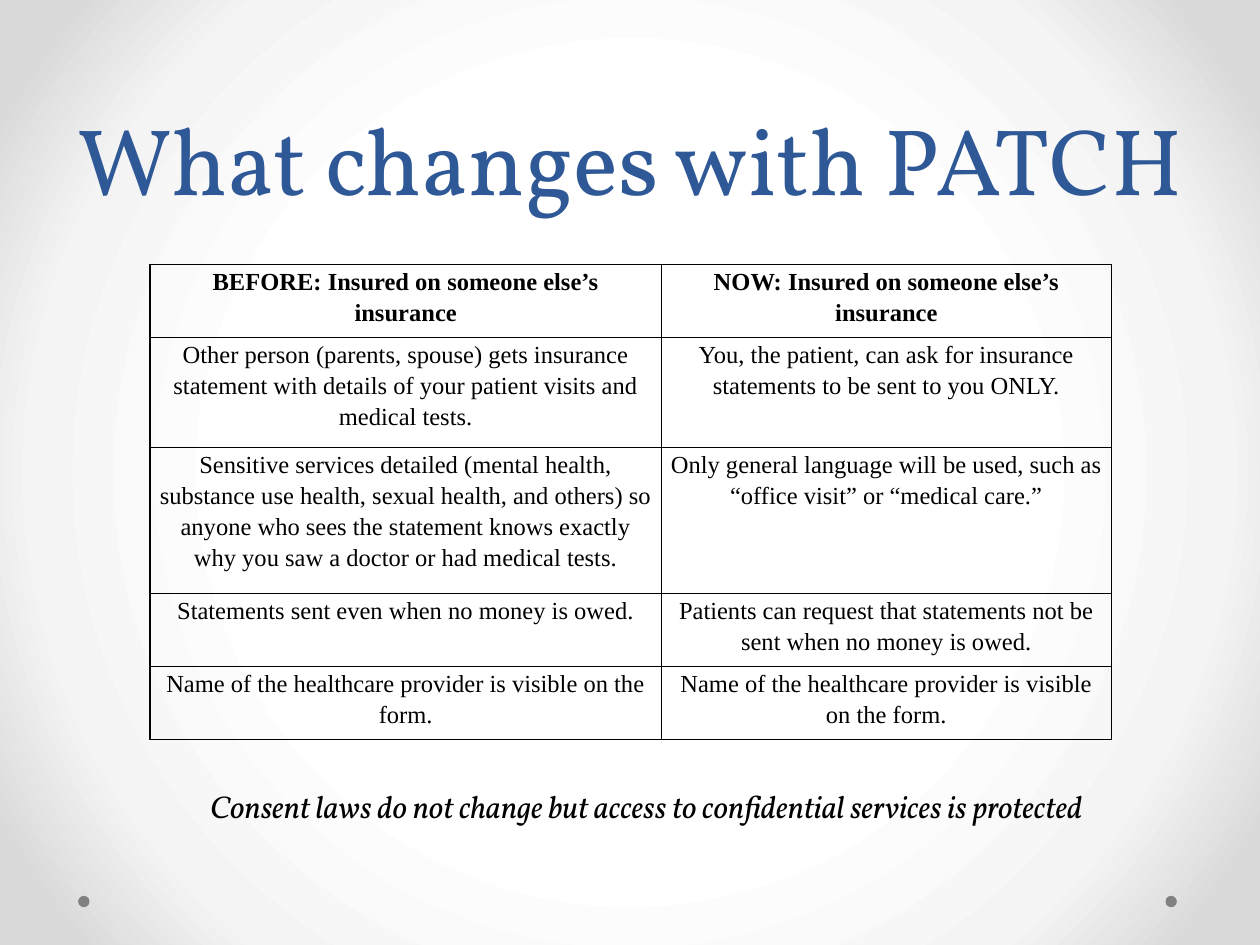
from pptx import Presentation, util as u
from pptx.dml.color import RGBColor
from pptx.enum import shapes, text
from pptx.oxml import parse_xml
from pptx.oxml.ns import nsdecls, qn

HEADING = "What changes with PATCH"
COMPARISON = [
    ("BEFORE: Insured on someone else’s insurance",
     "NOW: Insured on someone else’s insurance"),
    ("Other person (parents, spouse) gets insurance statement with details "
     "of your patient visits and medical tests.",
     "You, the patient, can ask for insurance statements to be sent to you ONLY."),
    ("Sensitive services detailed (mental health, substance use health, sexual "
     "health, and others) so anyone who sees the statement knows exactly why "
     "you saw a doctor or had medical tests.",
     "Only general language will be used, such as “office visit” or “medical care.”"),
    ("Statements sent even when no money is owed.",
     "Patients can request that statements not be sent when no money is owed."),
    ("Name of the healthcare provider is visible on the form.",) * 2,
]
CONSENT = "Consent laws do not change but access to confidential services is protected"


def color(code):
    return RGBColor.from_string(code)


def write(frame, words, size, font, ink="000000", bold=False, italic=False, spacing=None):
    paragraph = frame.paragraphs[0]
    paragraph.alignment = text.PP_ALIGN.CENTER
    paragraph.line_spacing = spacing
    run = paragraph.add_run()
    run.text = words
    run.font.size = u.Pt(size)
    run.font.name = font
    run.font.bold = bold
    run.font.italic = italic
    run.font.color.rgb = color(ink)


class Page:
    width, height = u.Inches(10), u.Inches(7.5)
    display, body = "Vollkorn", "Times New Roman"

    def __init__(self, deck):
        deck.slide_width, deck.slide_height = self.width, self.height
        self.slide = deck.slides.add_slide(deck.slide_layouts[5])

    def box(self, left, top, width, height):
        return (round(left * self.width), round(top * self.height),
                round(width * self.width), round(height * self.height))

    def backdrop(self, stops):
        fill = self.slide.background.fill
        fill.solid()
        marks = "".join(f'<a:gs pos="{share * 1000}"><a:srgbClr val="{code}"/></a:gs>'
                        for share, code in stops)
        gradient = parse_xml(
            f'<a:gradFill {nsdecls("a")} rotWithShape="1"><a:gsLst>{marks}</a:gsLst>'
            '<a:path path="circle"><a:fillToRect l="50000" t="50000" r="50000" b="50000"/>'
            '</a:path></a:gradFill>')
        properties = self.slide.background._cSld.bg.bgPr
        properties.replace(properties.find(qn("a:solidFill")), gradient)

    def dot(self, left, top, size, ink):
        left, top, width, _ = self.box(left, top, size, size)
        dot = self.slide.shapes.add_shape(shapes.MSO_SHAPE.OVAL, left, top, width, width)
        dot.shadow.inherit = False
        dot.fill.solid()
        dot.fill.fore_color.rgb = color(ink)
        dot.line.fill.background()

    def title(self, words, *place):
        heading = self.slide.shapes.title
        heading.left, heading.top, heading.width, heading.height = self.box(*place)
        frame = heading.text_frame
        frame.auto_size = text.MSO_AUTO_SIZE.NONE
        frame.vertical_anchor = text.MSO_ANCHOR.BOTTOM
        write(frame, words, 54, self.display, ink="2F5897", spacing=u.Pt(58))

    def note(self, words, *place):
        frame = self.slide.shapes.add_textbox(*self.box(*place)).text_frame
        frame.word_wrap = False
        write(frame, words, 18, self.display, italic=True)

    def border(self, cell):
        properties = cell._tc.get_or_add_tcPr()
        for index, side in enumerate("LRTB"):
            properties.insert(index, parse_xml(
                f'<a:ln{side} {nsdecls("a")} w="12700"><a:solidFill>'
                f'<a:srgbClr val="000000"/></a:solidFill></a:ln{side}>'))

    def table(self, rows, columns, heights, *place):
        grid = self.slide.shapes.add_table(len(rows), len(columns), *self.box(*place)).table
        grid.first_row = grid.horz_banding = False
        for column, width in zip(grid.columns, columns):
            column.width = u.Inches(width)
        for r, (entries, height) in enumerate(zip(rows, heights)):
            grid.rows[r].height = u.Inches(height)
            for c, words in enumerate(entries):
                cell = grid.cell(r, c)
                cell.margin_left = cell.margin_right = u.Inches(0.07)
                cell.margin_top = cell.margin_bottom = 0
                cell.fill.background()
                self.border(cell)
                write(cell.text_frame, words, 14, self.body, bold=r == 0, spacing=1.15)


def main():
    deck = Presentation()
    page = Page(deck)
    page.backdrop([(50, "FFFFFF"), (76, "F4F4F4"), (92, "DADADA")])
    for left in (0.925, 0.062):
        page.dot(left, 0.948, 0.009, "808080")
    page.title(HEADING, 0.05, 0, 0.9, 0.2333)
    page.table(COMPARISON, [4.06, 3.57], [0.58, 0.87, 1.16, 0.58, 0.58],
               0.119, 0.28, 0.762, 0.5027)
    page.note(CONSENT, 0.127, 0.8267, 0.772, 0.0947)
    deck.save("out.pptx")


if __name__ == "__main__":
    main()
